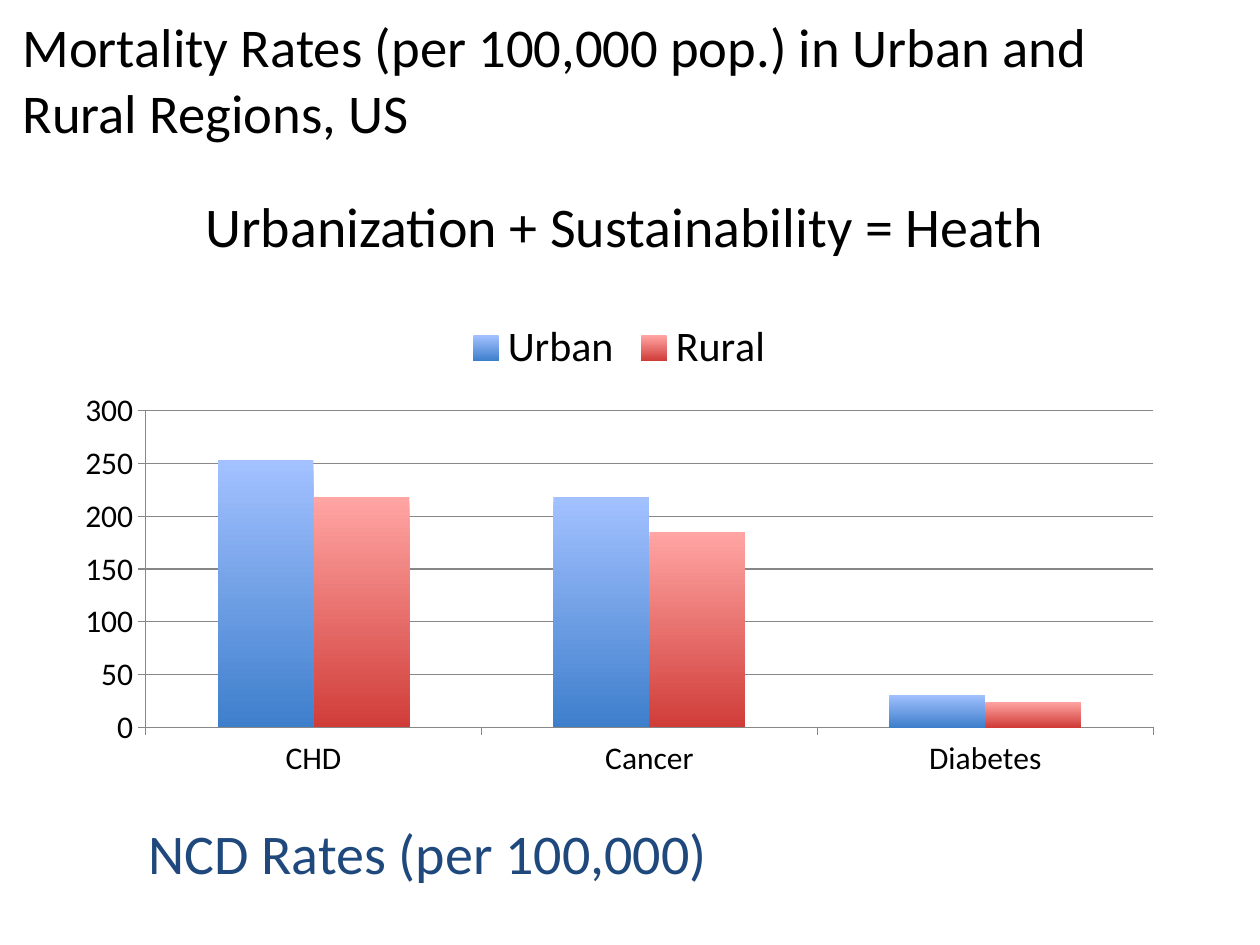
import pptx
import pptx.chart.data
import pptx.dml.color
import pptx.enum.chart
import pptx.enum.text
import pptx.util

RGBColor = pptx.dml.color.RGBColor
Inches = pptx.util.Inches
Pt = pptx.util.Pt
Align = pptx.enum.text.PP_ALIGN

BLACK = RGBColor(0x00, 0x00, 0x00)
NAVY = RGBColor(0x1F, 0x49, 0x7D)
GRAY = RGBColor(0x87, 0x87, 0x87)
BLUE_TOP, BLUE_BOTTOM = RGBColor(0xA3, 0xC1, 0xFF), RGBColor(0x3E, 0x7F, 0xCC)
RED_TOP, RED_BOTTOM = RGBColor(0xFF, 0xA5, 0xA3), RGBColor(0xD0, 0x3D, 0x39)
FONT = "Calibri"

HEADING = "Mortality Rates (per 100,000 pop.) in Urban and Rural Regions, US"
TITLE = "Urbanization + Sustainability = Heath"
CAPTION = "NCD Rates (per 100,000)"
CAUSES = ["CHD", "Cancer", "Diabetes"]
RATES = [
    ("Urban", (253, 218, 31), (BLUE_TOP, BLUE_BOTTOM)),
    ("Rural", (218, 185, 24), (RED_TOP, RED_BOTTOM)),
]

HEADING_BOX = (0.08, 0, 9.42, 1.25)
TITLE_BOX = (0.5, 1.25, 8.92, 1.08)
CHART_BOX = (0.5, 2.42, 8.83, 3.83)
CAPTION_BOX = (1.08, 6.5, 8.42, 0.6)


def place(sp, box):
    sp.left, sp.top, sp.width, sp.height = map(Inches, box)


def write(sp, text, size=32, color=BLACK, align=Align.LEFT, spacing=None):
    tf = sp.text_frame
    tf.word_wrap = True
    tf.auto_size = pptx.enum.text.MSO_AUTO_SIZE.NONE
    tf.vertical_anchor = pptx.enum.text.MSO_ANCHOR.MIDDLE
    p = tf.paragraphs[0]
    p.alignment = align
    p.line_spacing = spacing
    r = p.add_run()
    r.text = text
    set_font(r.font, size, color)


def set_font(font, size, color=BLACK):
    font.name = FONT
    font.size = Pt(size)
    font.color.rgb = color


def set_line(line):
    line.color.rgb = GRAY
    line.width = Pt(0.75)


def add_rate_chart(slide):
    data = pptx.chart.data.CategoryChartData()
    data.categories = CAUSES
    for name, values, _ in RATES:
        data.add_series(name, values)
    kind = pptx.enum.chart.XL_CHART_TYPE.COLUMN_CLUSTERED
    chart = slide.shapes.add_chart(kind, *map(Inches, CHART_BOX), data).chart
    set_font(chart.font, 18)
    chart.has_title = False
    chart.has_legend = True
    chart.legend.position = pptx.enum.chart.XL_LEGEND_POSITION.TOP
    chart.legend.include_in_layout = False
    set_font(chart.legend.font, 24)

    for axis in (chart.category_axis, chart.value_axis):
        axis.major_tick_mark = pptx.enum.chart.XL_TICK_MARK.OUTSIDE
        set_line(axis.format.line)
    chart.value_axis.has_major_gridlines = True
    set_line(chart.value_axis.major_gridlines.format.line)
    chart.value_axis.minimum_scale = 0
    chart.value_axis.maximum_scale = 300
    chart.value_axis.major_unit = 50

    plot = chart.plots[0]
    plot.vary_by_categories = False
    plot.gap_width = 150
    plot.overlap = 0
    for series, (_, _, colors) in zip(plot.series, RATES):
        fill = series.format.fill
        fill.gradient()
        fill.gradient_angle = 270
        for stop, position, color in zip(fill.gradient_stops, (0, 1), colors):
            stop.position = position
            stop.color.rgb = color


def main():
    prs = pptx.Presentation()
    prs.slide_width, prs.slide_height = Inches(10), Inches(7.5)
    slide = prs.slides.add_slide(prs.slide_layouts[5])
    place(slide.shapes.title, TITLE_BOX)
    write(slide.shapes.title, TITLE, align=Align.CENTER)
    add_rate_chart(slide)
    caption = slide.shapes.add_textbox(*map(Inches, CAPTION_BOX))
    write(caption, CAPTION, color=NAVY, spacing=0.9)
    heading = slide.shapes.add_textbox(*map(Inches, HEADING_BOX))
    write(heading, HEADING, size=31.2)
    prs.save("out.pptx")


if __name__ == "__main__":
    main()
